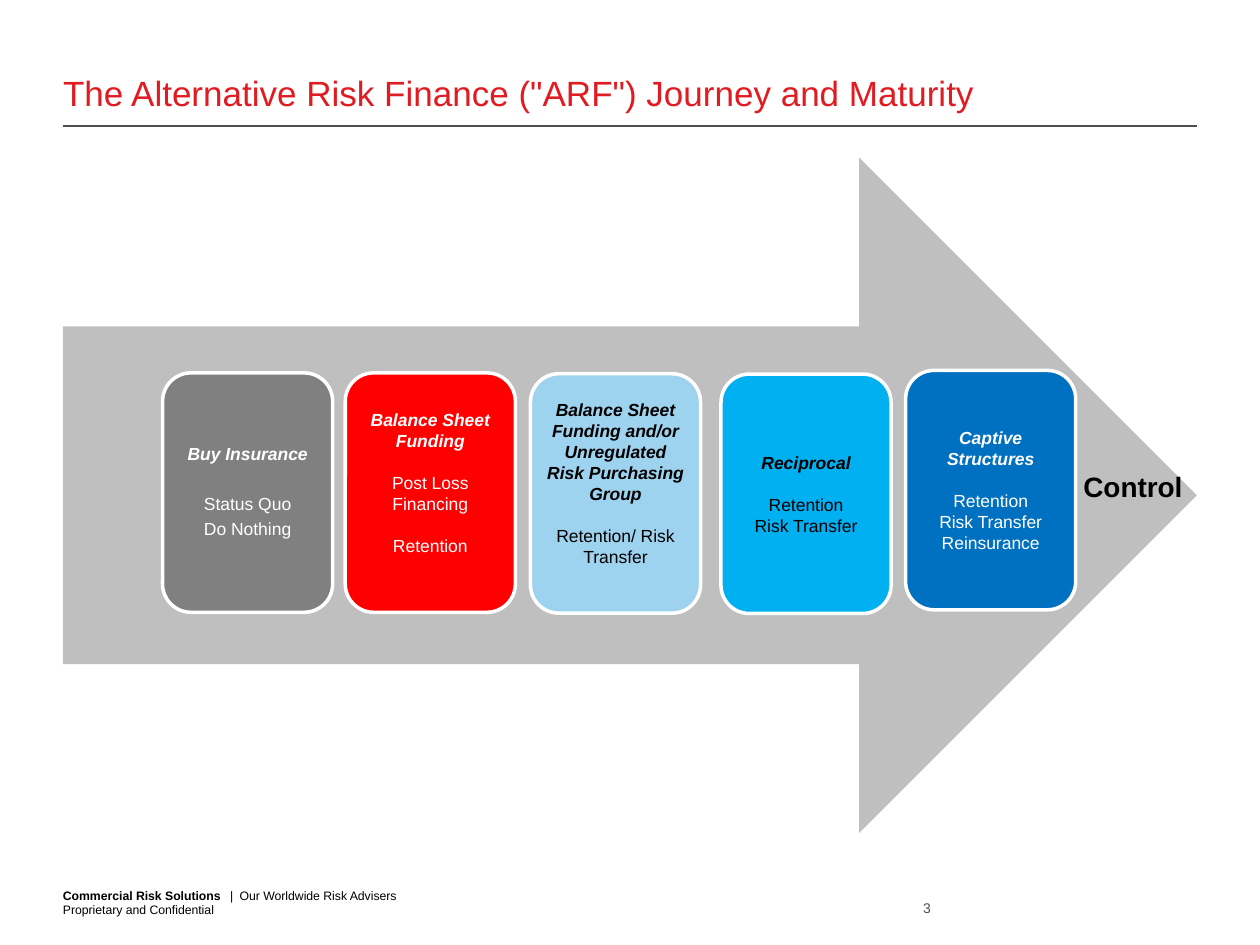
from dataclasses import dataclass
from typing import Any

from lxml.etree import SubElement
from pptx import Presentation
from pptx.dml.color import RGBColor
from pptx.enum.shapes import MSO_CONNECTOR, MSO_SHAPE
from pptx.enum.text import MSO_ANCHOR, PP_ALIGN
from pptx.oxml.ns import qn
from pptx.util import Pt

MARGIN = 36
CONTENT_WIDTH = 648
CARD_WIDTH, CARD_HEIGHT = 97.2, 136.8
CARD_INSET = 3
LINE_HEIGHT = 12

# left, top, fill, text colour, heading, groups of lines, space kept free below
STAGES = [
    (92.9, 213.1, "808080", "FFFFFF", "Buy Insurance",
     [["Status Quo", "Do Nothing"]], 0),
    (197.3, 213.1, "FF0000", "FFFFFF", "Balance Sheet Funding",
     [["Post Loss", "Financing"], ["Retention"]], LINE_HEIGHT),
    (303.1, 213.6, "9ED3EF", "000000",
     "Balance Sheet Funding and/or Unregulated Risk Purchasing Group",
     [["Retention/ Risk Transfer"]], LINE_HEIGHT),
    (412, 213.8, "00B0F0", "000000", "Reciprocal",
     [["Retention", "Risk Transfer"]], 0),
    (517.5, 211.7, "0070C0", "FFFFFF", "Captive Structures",
     [["Retention", "Risk Transfer", "Reinsurance"]], 0),
]


def rgb(value):
    return RGBColor.from_string(value)


@dataclass
class SlideBuilder:
    slide: Any
    font: str = "Arial"

    def style(self, run, size, color, bold=False, italic=False):
        run.font.name = self.font
        run.font.size = Pt(size)
        run.font.color.rgb = rgb(color)
        run.font.bold = bold
        run.font.italic = italic

    def frame(self, shape, anchor, inset, wrap=True):
        """Set up the text frame of a shape and return it."""
        frame = shape.text_frame
        frame.word_wrap = wrap
        frame.vertical_anchor = anchor
        frame.margin_left = frame.margin_right = Pt(inset)
        frame.margin_top = frame.margin_bottom = Pt(inset)
        return frame

    def title(self, text):
        title = self.slide.shapes.title
        title.left, title.top = Pt(MARGIN), Pt(23.8)
        title.width, title.height = Pt(CONTENT_WIDTH), Pt(41)
        frame = self.frame(title, MSO_ANCHOR.BOTTOM, 0)
        frame.text = text
        frame.paragraphs[0].alignment = PP_ALIGN.LEFT
        self.style(frame.paragraphs[0].runs[0], 20, "E11B22")

    def rule(self, top):
        rule = self.slide.shapes.add_connector(
            MSO_CONNECTOR.STRAIGHT, Pt(MARGIN), Pt(top),
            Pt(MARGIN + CONTENT_WIDTH), Pt(top))
        rule.line.color.rgb = rgb("4D4F53")
        rule.line.width = Pt(0.75)
        SubElement(rule._element.spPr, qn("a:effectLst"))

    def block(self, preset, left, top, width, height, fill, outline=None):
        block = self.slide.shapes.add_shape(
            preset, Pt(left), Pt(top), Pt(width), Pt(height))
        block.shadow.inherit = False
        block.fill.solid()
        block.fill.fore_color.rgb = rgb(fill)
        if outline:
            block.line.color.rgb = rgb(outline)
            block.line.width = Pt(2)
        else:
            block.line.fill.background()
        return block

    def card(self, left, top, fill, color, heading, groups, space_below, loose):
        """Add a stage card; a loose one has its lines set further apart."""
        card = self.block(MSO_SHAPE.ROUNDED_RECTANGLE, left, top,
                          CARD_WIDTH, CARD_HEIGHT, fill, "FFFFFF")
        frame = self.frame(card, MSO_ANCHOR.MIDDLE, CARD_INSET)
        frame.margin_bottom = Pt(CARD_INSET + space_below)
        lines = [heading] + [line for group in groups for line in group]
        group_starts = {id(group[0]) for group in groups}
        frame.text = "\n".join(lines)
        for line, paragraph in zip(lines, frame.paragraphs):
            is_heading = line is heading
            paragraph.alignment = PP_ALIGN.CENTER
            if loose:
                paragraph.line_spacing = 0.9
                paragraph.space_after = Pt(3.5)
            if id(line) in group_starts:
                paragraph.space_before = Pt(14.3 if loose else LINE_HEIGHT)
            self.style(paragraph.runs[0], 10, color, is_heading, is_heading)

    def label(self, text, left, top, width, height, size, color, bold=False,
              align=PP_ALIGN.LEFT, anchor=MSO_ANCHOR.BOTTOM, inset=0, wrap=True):
        label = self.slide.shapes.add_textbox(
            Pt(left), Pt(top), Pt(width), Pt(height))
        frame = self.frame(label, anchor, inset, wrap)
        frame.text = text
        for paragraph in frame.paragraphs:
            paragraph.alignment = align
            self.style(paragraph.runs[0], size, color, bold)
        return frame

    def footer(self, division, unit, notice):
        frame = self.label(f"{division}\n{notice}", MARGIN, 506.9, 475.2, 17.3,
                           7, "000000")
        first = frame.paragraphs[0]
        first.runs[0].font.bold = True
        tabs = SubElement(first._p.get_or_add_pPr(), qn("a:tabLst"))
        for position in (95.5, 101):
            SubElement(tabs, qn("a:tab"), pos=str(Pt(position)), algn="l")
        addition = first.add_run()
        addition.text = f"\t|\t{unit}"
        self.style(addition, 7, "000000")


def main():
    presentation = Presentation()
    presentation.slide_width, presentation.slide_height = Pt(720), Pt(540)
    builder = SlideBuilder(
        presentation.slides.add_slide(presentation.slide_layouts[5]))

    builder.rule(72)
    builder.footer("Commercial Risk Solutions", "Our Worldwide Risk Advisers",
                   "Proprietary and Confidential")
    builder.label("3", 504, 514, 28, 9.4, 8, "4D4F53", align=PP_ALIGN.RIGHT)
    builder.block(MSO_SHAPE.RIGHT_ARROW, MARGIN, 90, CONTENT_WIDTH, 386, "BFBFBF")
    for number, stage in enumerate(STAGES):
        builder.card(*stage, loose=number == 0)
    builder.title('The Alternative Risk Finance ("ARF") Journey and Maturity')
    builder.label("Control", 612, 265, 72, 26.6, 16, "000000", bold=True,
                  anchor=MSO_ANCHOR.TOP, inset=3.6, wrap=False).margin_left = Pt(7.2)
    presentation.save("out.pptx")


if __name__ == "__main__":
    main()
